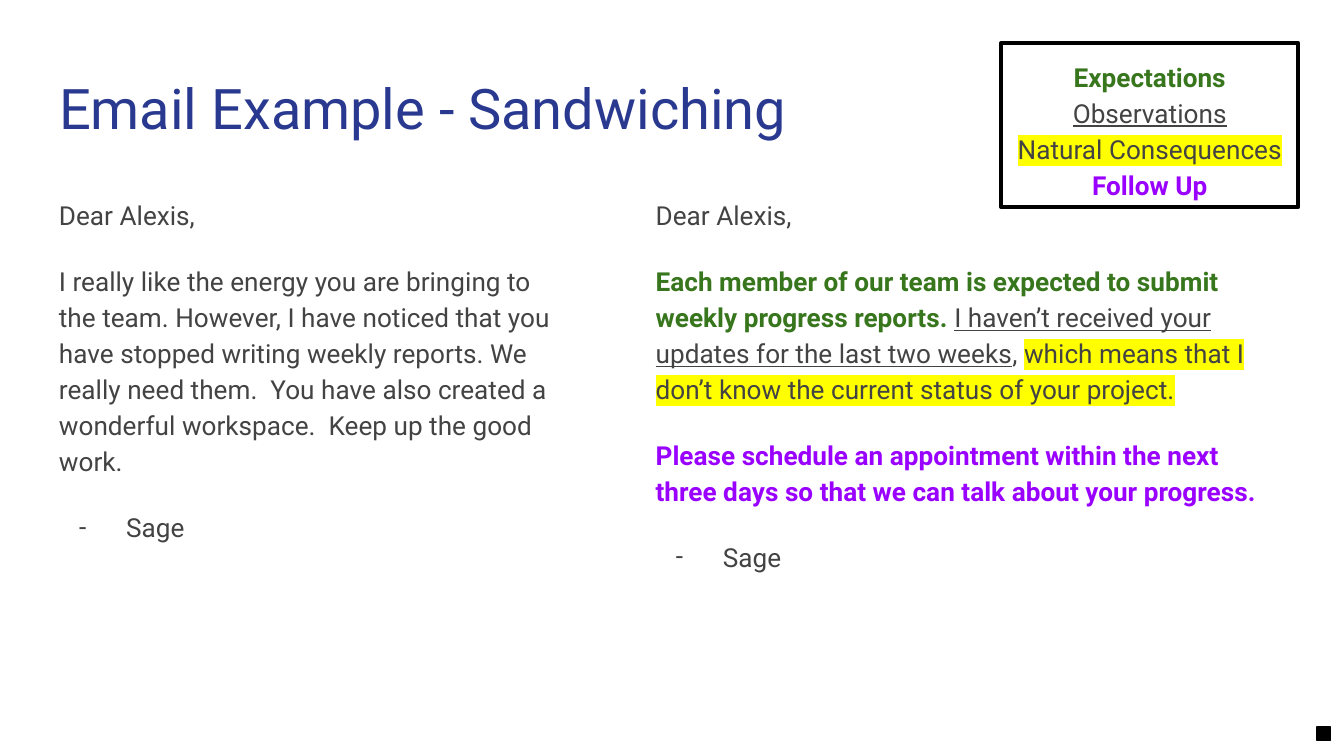
from dataclasses import dataclass

from lxml.etree import SubElement
from pptx import Presentation
from pptx.dml.color import RGBColor
from pptx.enum.shapes import MSO_SHAPE
from pptx.enum.text import MSO_ANCHOR, PP_ALIGN
from pptx.oxml import parse_xml
from pptx.oxml.ns import nsdecls, qn
from pptx.util import Inches, Pt


@dataclass(frozen=True)
class Theme:
    font: str = "Roboto"
    title_size: int = 30
    body_size: int = 14
    line_spacing: float = 1.15
    paragraph_gap: int = 16
    title: str = "2A3990"
    text: str = "434343"
    expectation: str = "38761D"
    follow_up: str = "9900FF"
    highlight: str = "FFFF00"
    black: str = "000000"


THEME = Theme()

STYLES = {
    "plain": {},
    "expectation": {"color": THEME.expectation, "bold": True},
    "observation": {"underline": True},
    "consequence": {"highlight": THEME.highlight},
    "follow_up": {"color": THEME.follow_up, "bold": True},
}

LEGEND = [
    [("Expectations", "expectation")],
    [("Observations", "observation")],
    [("Natural Consequences", "consequence")],
    [("Follow Up", "follow_up")],
]

GREETING = [("Dear Alexis,", "plain")]
SIGNATURE = [("Sage", "plain")]

FIRST_EMAIL = [
    GREETING,
    [("I really like the energy you are bringing to the team. However, I have noticed "
      "that you have stopped writing weekly reports. We really need them.  You have "
      "also created a wonderful workspace.  Keep up the good work.", "plain")],
    SIGNATURE,
]

SECOND_EMAIL = [
    GREETING,
    [("Each member of our team is expected to submit weekly progress reports. ", "expectation"),
     ("I haven’t received your updates for the last two weeks", "observation"),
     (", ", "plain"),
     ("which means that I don’t know the current status of your project.", "consequence")],
    [("Please schedule an appointment within the next three days so that we can talk "
      "about your progress.", "follow_up")],
    SIGNATURE,
]


def rgb(color):
    return RGBColor.from_string(color)


def prepare_frame(frame):
    frame.word_wrap = True
    frame.vertical_anchor = MSO_ANCHOR.TOP
    frame.margin_left = frame.margin_right = Inches(0.1)
    frame.margin_top = frame.margin_bottom = Inches(0.1)


def set_font(font, size, color):
    font.name = THEME.font
    font.size = Pt(size)
    font.color.rgb = rgb(color)


def highlight_run(run, color):
    fill = run._r.get_or_add_rPr().find(qn("a:solidFill"))
    fill.addnext(parse_xml(
        f'<a:highlight {nsdecls("a")}><a:srgbClr val="{color}"/></a:highlight>'))


def add_run(paragraph, text, color=THEME.text, bold=False, underline=False, highlight=None):
    run = paragraph.add_run()
    run.text = text
    run.font.color.rgb = rgb(color)
    run.font.bold = bold
    run.font.underline = underline
    if highlight:
        highlight_run(run, highlight)


def add_dash(paragraph):
    properties = paragraph._p.get_or_add_pPr()
    properties.set("marL", str(Inches(0.5)))
    properties.set("indent", str(Inches(-0.35)))
    bullet_color = SubElement(properties, qn("a:buClr"))
    SubElement(bullet_color, qn("a:srgbClr"), val=THEME.text)
    SubElement(properties, qn("a:buFont"), typeface=THEME.font)
    SubElement(properties, qn("a:buChar"), char="-")


def write_paragraphs(frame, paragraphs, gap=0, alignment=PP_ALIGN.LEFT):
    prepare_frame(frame)
    for index, parts in enumerate(paragraphs):
        paragraph = frame.add_paragraph() if index else frame.paragraphs[0]
        paragraph.alignment = alignment
        paragraph.line_spacing = THEME.line_spacing
        paragraph.space_before = Pt(gap if index else 0)
        if parts is SIGNATURE:
            add_dash(paragraph)
        set_font(paragraph.font, THEME.body_size, THEME.text)
        for text, style in parts:
            add_run(paragraph, text, **STYLES[style])


def set_title(slide, text):
    title = slide.shapes.title
    title.left, title.top = Inches(0.34), Inches(0.45)
    title.width, title.height = Inches(9.32), Inches(0.66)
    prepare_frame(title.text_frame)
    title.text_frame.text = text
    paragraph = title.text_frame.paragraphs[0]
    paragraph.alignment = PP_ALIGN.LEFT
    set_font(paragraph.font, THEME.title_size, THEME.title)


def add_email(slide, left, width, paragraphs):
    box = slide.shapes.add_textbox(Inches(left), Inches(1.35), Inches(width), Inches(3.65))
    write_paragraphs(box.text_frame, paragraphs, gap=THEME.paragraph_gap)


def add_rectangle(slide, left, top, width, height, line_width, fill=None):
    shape = slide.shapes.add_shape(
        MSO_SHAPE.RECTANGLE, Inches(left), Inches(top), Inches(width), Inches(height))
    shape.shadow.inherit = False
    shape.line.color.rgb = rgb(THEME.black)
    shape.line.width = Pt(line_width)
    if fill:
        shape.fill.solid()
        shape.fill.fore_color.rgb = rgb(fill)
    else:
        shape.fill.background()
    return shape


def main():
    presentation = Presentation()
    presentation.slide_width = Inches(10)
    presentation.slide_height = Inches(10 * 9 / 16)
    slide = presentation.slides.add_slide(presentation.slide_layouts[5])
    set_title(slide, "Email Example - Sandwiching")
    add_email(slide, 4.78, 4.88, SECOND_EMAIL)
    add_email(slide, 0.34, 3.88, FIRST_EMAIL)
    legend = add_rectangle(slide, 7.45, 0.32, 2.21, 1.22, line_width=2.25)
    write_paragraphs(legend.text_frame, LEGEND, alignment=PP_ALIGN.CENTER)
    add_rectangle(slide, 9.8, 5.41, 0.1, 0.1, line_width=0.75, fill=THEME.black)
    presentation.save("out.pptx")


if __name__ == "__main__":
    main()
